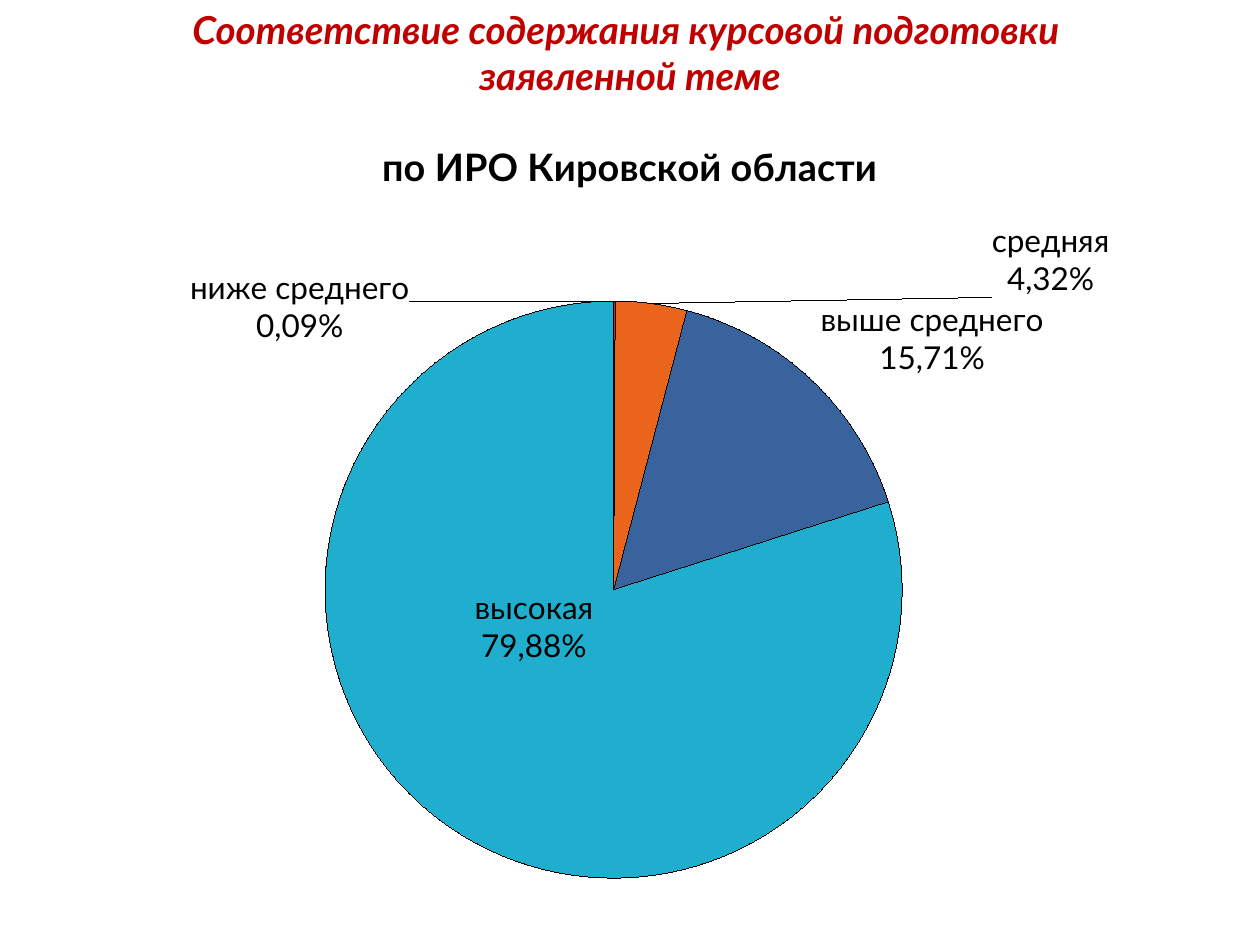
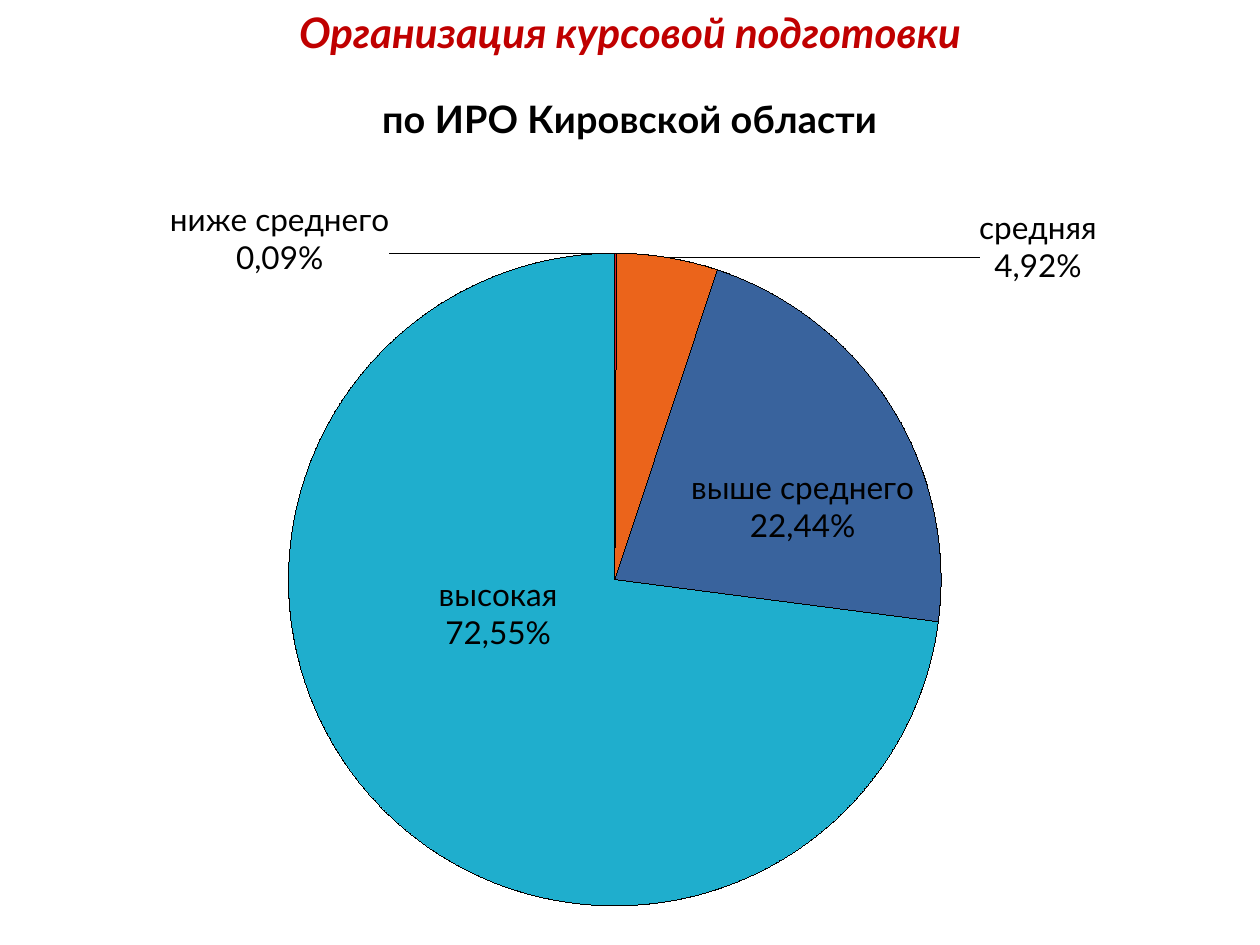
import math
from dataclasses import dataclass

import pptx
import pptx.chart.chart
import pptx.chart.data
import pptx.dml.color
import pptx.enum.chart
import pptx.enum.text
import pptx.oxml
import pptx.oxml.ns
import pptx.slide
import pptx.util
from pptx.util import Inches

# Shared look
FONT = "Lato"
TITLE_RED = "C00000"
BLACK = "000000"
SLICE_COLOURS = ["2DA2BF", "DA1F28", "EB641B", "39639D", "1FAECD"]
CATEGORIES = ["низкая", "ниже среднего", "средняя", "выше среднего", "высокая"]
CHART_TITLE = "по ИРО Кировской области"
SLIDE_WIDTH, SLIDE_HEIGHT = 10, 7.5
TITLE_ONLY_LAYOUT = 5

# Label boxes: half sizes and gap from the pie, in inches
LABEL_HALF_WIDTHS = {1: 0.87, 2: 0.46, 3: 0.88, 4: 0.47}
LABEL_HALF_HEIGHT = 0.3
LABEL_GAP = 0.04


@dataclass
class SliceLabel:
    index: int
    percent: str
    centre_x: float
    centre_y: float


@dataclass
class RatingSlide:
    """One survey question; lengths in inches, points measured on the slide."""
    title_lines: list[str]
    title_size: float
    title_height: float
    chart_top: float
    values: list[float]
    pie_centre: tuple[float, float]
    pie_radius: float
    labels: list[SliceLabel]


RATING_SLIDES = [
    RatingSlide(
        ["Соответствие содержания курсовой подготовки ", "заявленной теме"],
        22, 0.84, 0.86, [0, 0.09, 4, 16, 80], (4.87, 4.68), 2.29,
        [SliceLabel(1, "0,09%", 2.38, 2.45), SliceLabel(2, "4,32%", 8.33, 2.08),
         SliceLabel(3, "15,71%", 7.38, 2.7), SliceLabel(4, "79,88%", 4.25, 4.95)]),
    RatingSlide(
        ["Организация курсовой подготовки"],
        24, 0.5, 0.47, [0, 0.09, 5, 22, 73], (4.88, 4.6), 2.59,
        [SliceLabel(1, "0,09%", 2.22, 1.91), SliceLabel(2, "4,92%", 8.23, 1.97),
         SliceLabel(3, "22,44%", 6.35, 4.03), SliceLabel(4, "72,55%", 3.97, 4.85)]),
]


def colour(value: str) -> pptx.dml.color.RGBColor:
    return pptx.dml.color.RGBColor.from_string(value)


def format_font(font, size: float, hex_colour: str = BLACK, **styles) -> None:
    values = {"name": FONT, "size": pptx.util.Pt(size), **styles}
    for name, value in values.items():
        setattr(font, name, value)
    font.color.rgb = colour(hex_colour)


def manual_layout(target: str = "", **fractions: float):
    """Build a chart layout element; lengths are fractions of the chart."""
    entries = {"layoutTarget": target} if target else {}
    if target:
        entries.update(xMode="edge", yMode="edge")
    entries.update({name: f"{value:.4f}" for name, value in fractions.items()})
    children = "".join(f'<c:{name} val="{value}"/>' for name, value in entries.items())
    return pptx.oxml.parse_xml(
        f'<c:layout {pptx.oxml.ns.nsdecls("c")}>'
        f"<c:manualLayout>{children}</c:manualLayout></c:layout>")


def add_title(slide: pptx.slide.Slide, rating: RatingSlide) -> None:
    title = slide.shapes.title
    box = {"left": 0, "top": 0, "width": SLIDE_WIDTH, "height": rating.title_height}
    for name, value in box.items():
        setattr(title, name, Inches(value))
    frame = title.text_frame
    frame.word_wrap = True
    frame.auto_size = pptx.enum.text.MSO_AUTO_SIZE.NONE
    frame.vertical_anchor = pptx.enum.text.MSO_ANCHOR.TOP
    frame.text = "\n".join(rating.title_lines)
    for paragraph in frame.paragraphs:
        paragraph.alignment = pptx.enum.text.PP_ALIGN.CENTER
        format_font(paragraph.runs[0].font, rating.title_size, TITLE_RED,
                    bold=True, italic=True)


def place_pie(chart: pptx.chart.chart.Chart, rating: RatingSlide, height: float) -> None:
    plot_area = chart.element.xpath(".//c:plotArea")[0]
    for layout in plot_area.xpath("./c:layout"):
        plot_area.remove(layout)
    centre_x, centre_y = rating.pie_centre
    radius = rating.pie_radius
    plot_area.insert(0, manual_layout(
        "inner", x=(centre_x - radius) / SLIDE_WIDTH,
        y=(centre_y - radius - rating.chart_top) / height,
        w=2 * radius / SLIDE_WIDTH, h=2 * radius / height))


def outside_label_centre(rating: RatingSlide, index: int) -> tuple[float, float]:
    """Centre of a label that touches the outside of its slice."""
    share = sum(rating.values[:index]) + rating.values[index] / 2
    angle = math.tau * share / sum(rating.values)
    reach = rating.pie_radius + LABEL_GAP
    across, up = math.sin(angle), math.cos(angle)
    half_width = LABEL_HALF_WIDTHS[index]
    shift_x = math.copysign(half_width, across) if abs(across) > 0.09 else 0
    shift_y = math.copysign(LABEL_HALF_HEIGHT, up)
    return (rating.pie_centre[0] + reach * across + shift_x,
            rating.pie_centre[1] - reach * up - shift_y)


def add_labels(chart: pptx.chart.chart.Chart, rating: RatingSlide, height: float) -> None:
    series = chart.plots[0].series[0]
    series.data_labels.show_value = False
    for label in rating.labels:
        frame = series.points[label.index].data_label.text_frame
        frame.text = f"{CATEGORIES[label.index]}\n{label.percent}"
        for paragraph in frame.paragraphs:
            format_font(paragraph.runs[0].font, 18)
        start_x, start_y = outside_label_centre(rating, label.index)
        element = chart.element.xpath(f".//c:dLbl[c:idx/@val='{label.index}']")[0]
        element.insert(1, manual_layout(x=(label.centre_x - start_x) / SLIDE_WIDTH,
                                        y=(label.centre_y - start_y) / height))


def add_pie(slide: pptx.slide.Slide, rating: RatingSlide) -> None:
    height = SLIDE_HEIGHT - rating.chart_top
    data = pptx.chart.data.CategoryChartData()
    data.categories = CATEGORIES
    data.add_series(CHART_TITLE, rating.values)
    chart = slide.shapes.add_chart(
        pptx.enum.chart.XL_CHART_TYPE.PIE, Inches(0), Inches(rating.chart_top),
        Inches(SLIDE_WIDTH), Inches(height), data).chart
    format_font(chart.font, 18)
    chart.has_legend = False
    chart.has_title = True
    chart.chart_title.text_frame.text = CHART_TITLE
    heading = chart.chart_title.text_frame.paragraphs[0]
    format_font(heading.runs[0].font, 21.6, bold=True)

    # Slices with hairline outlines
    plot = chart.plots[0]
    plot.vary_by_categories = True
    series = plot.series[0]
    series.format.line.color.rgb = colour(BLACK)
    series.format.line.width = pptx.util.Pt(0.75)
    for index, slice_colour in enumerate(SLICE_COLOURS):
        slice_format = series.points[index].format
        slice_format.fill.solid()
        slice_format.fill.fore_color.rgb = colour(slice_colour)
        slice_format.line.color.rgb = colour(BLACK)

    place_pie(chart, rating, height)
    add_labels(chart, rating, height)


def main() -> None:
    presentation = pptx.Presentation()
    presentation.slide_width = Inches(SLIDE_WIDTH)
    presentation.slide_height = Inches(SLIDE_HEIGHT)
    for rating in RATING_SLIDES:
        slide = presentation.slides.add_slide(presentation.slide_layouts[TITLE_ONLY_LAYOUT])
        add_title(slide, rating)
        add_pie(slide, rating)
    presentation.save("out.pptx")


if __name__ == "__main__":
    main()
